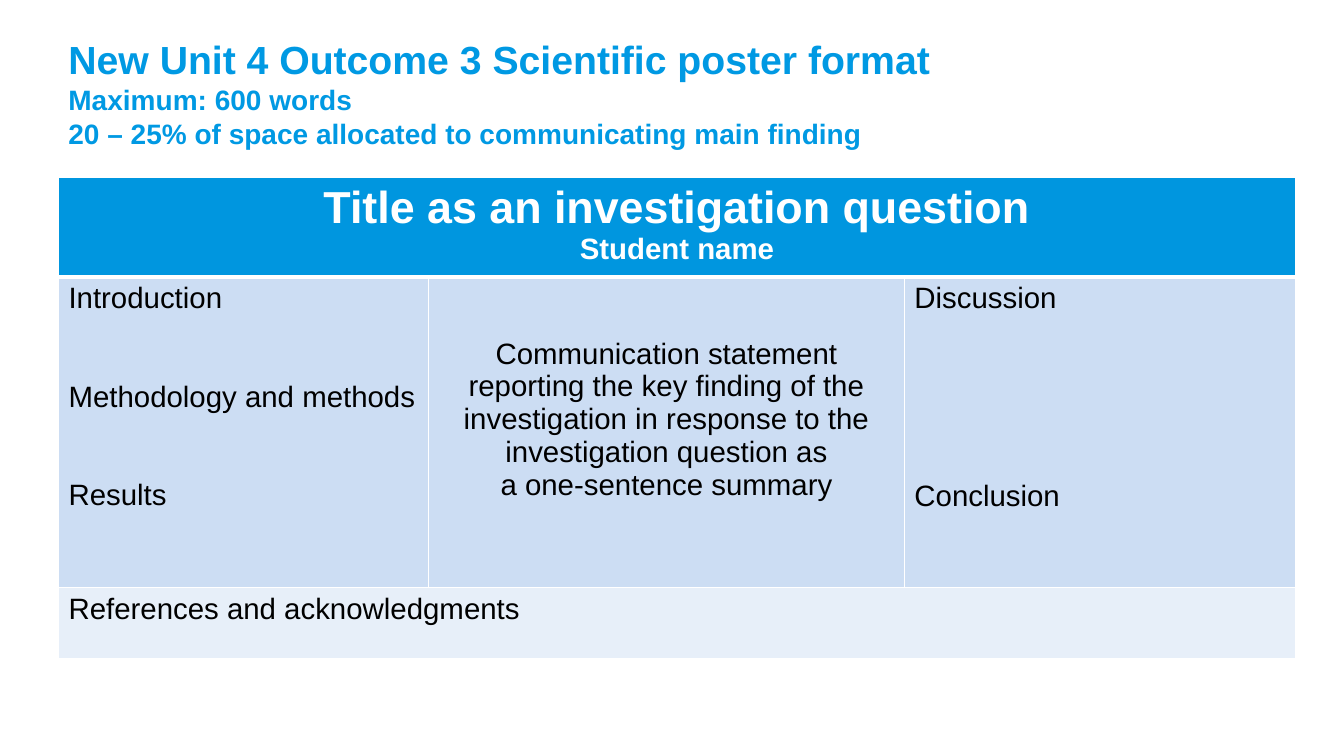
from lxml.etree import SubElement
from pptx import Presentation
from pptx.dml.color import RGBColor
from pptx.enum.text import MSO_ANCHOR, PP_ALIGN
from pptx.oxml.ns import qn
from pptx.util import Inches, Pt

FONT = "Arial"
BODY_SIZE = 21
LINE = 23.5  # height of one body line in points
COLUMN_WIDTHS = (3.67, 4.72, 3.88)
ROW_HEIGHTS = (0.99, 3.08, 0.7)
ROW_FILLS = ("0096DF", "CCDDF3", "E7EFF9")


def color(value):
    return RGBColor.from_string(value)


def write_lines(frame, lines, ink, bold=False, align=PP_ALIGN.LEFT):
    """Write (text, size, space before) lines, one paragraph each."""
    frame.word_wrap = True
    frame.text = "\n".join(text for text, _, _ in lines)
    for para, (_, size, space) in zip(frame.paragraphs, lines):
        para.alignment = align
        if space:
            para.space_before = Pt(space)
        for span in para.runs:
            span.font.name = FONT
            span.font.size = Pt(size)
            span.font.bold = bold
            span.font.color.rgb = color(ink)


def add_heading(page):
    box = page.shapes.add_textbox(Inches(0.58), Inches(0.29), Inches(9.45), Inches(1.26))
    box.text_frame.vertical_anchor = MSO_ANCHOR.MIDDLE
    write_lines(box.text_frame, [
        ("New Unit 4 Outcome 3 Scientific poster format", 28, 0),
        ("Maximum: 600 words", 20, 0),
        ("20 – 25% of space allocated to communicating main finding", 20, 0),
    ], "0099E3", bold=True)


def set_borders(cell, widths):
    """Draw white borders; widths are points for left, right, top, bottom."""
    properties = cell._tc.get_or_add_tcPr()
    for side, width in zip("LRTB", widths):
        line = SubElement(properties, qn(f"a:ln{side}"), w=str(Pt(width)))
        fill = SubElement(line, qn("a:solidFill"))
        SubElement(fill, qn("a:srgbClr"), val="FFFFFF")


def add_poster_grid(page):
    table = page.shapes.add_table(
        len(ROW_HEIGHTS), len(COLUMN_WIDTHS), Inches(0.58), Inches(1.76),
        Inches(sum(COLUMN_WIDTHS)), Inches(sum(ROW_HEIGHTS))).table
    table.horz_banding = False
    for column, width in zip(table.columns, COLUMN_WIDTHS):
        column.width = Inches(width)
    for index, (row, height) in enumerate(zip(table.rows, ROW_HEIGHTS)):
        row.height = Inches(height)
        for cell in row.cells:
            set_borders(cell, (1, 1, 3 if index == 1 else 1, 3 if index == 0 else 1))
            cell.fill.solid()
            cell.fill.fore_color.rgb = color(ROW_FILLS[index])
    for index in (0, 2):
        table.cell(index, 0).merge(table.cell(index, 2))
    return table


def fill_poster(table):
    write_lines(table.cell(0, 0).text_frame, [
        ("Title as an investigation question", 32, 0),
        ("Student name", BODY_SIZE, 0),
    ], "FFFFFF", bold=True, align=PP_ALIGN.CENTER)
    write_lines(table.cell(1, 0).text_frame, [
        ("Introduction", BODY_SIZE, 0),
        ("Methodology and methods", BODY_SIZE, 2 * LINE),
        ("Results", BODY_SIZE, 2 * LINE),
    ], "000000")
    finding = table.cell(1, 1)
    finding.margin_top = Inches(0.6)
    write_lines(finding.text_frame, [
        ("Communication statement reporting the key finding of the investigation "
         "in response to the investigation question as", BODY_SIZE, 0),
        ("a one-sentence summary", BODY_SIZE, 0),
    ], "000000", align=PP_ALIGN.CENTER)
    write_lines(table.cell(1, 2).text_frame, [
        ("Discussion", BODY_SIZE, 0),
        ("Conclusion", BODY_SIZE, 5 * LINE),
    ], "000000")
    write_lines(table.cell(2, 0).text_frame, [
        ("References and acknowledgments", BODY_SIZE, 0),
    ], "000000")


def main():
    deck = Presentation()
    deck.slide_width, deck.slide_height = Inches(13.33), Inches(7.5)
    page = deck.slides.add_slide(deck.slide_layouts[6])
    add_heading(page)
    fill_poster(add_poster_grid(page))
    deck.save("out.pptx")


if __name__ == "__main__":
    main()
